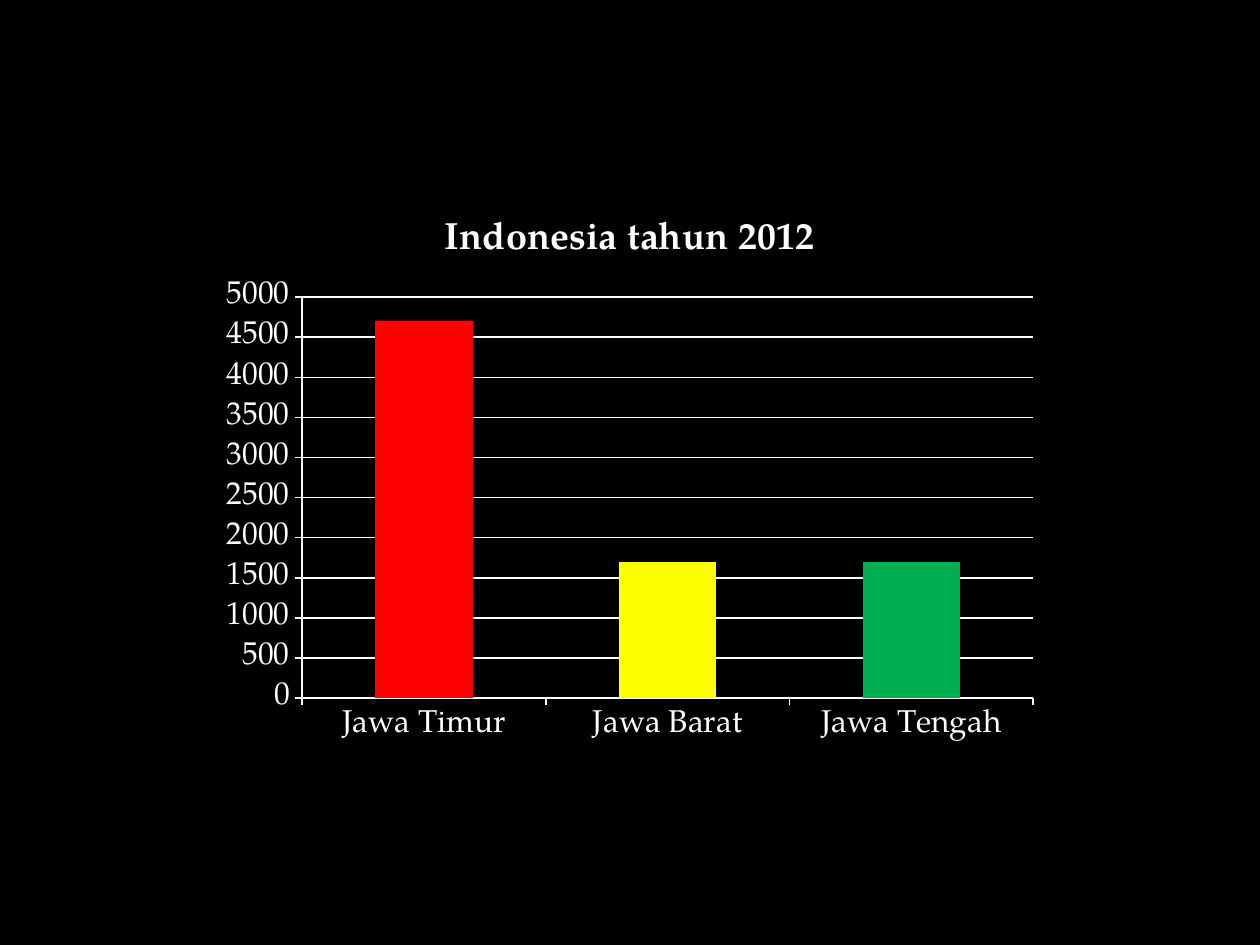
from pptx import Presentation
from pptx.chart.data import CategoryChartData
from pptx.dml.color import RGBColor
from pptx.enum.chart import XL_CHART_TYPE, XL_TICK_MARK
from pptx.util import Emu, Pt

SCALE = 914400 // 126
BLACK = RGBColor(0x00, 0x00, 0x00)
WHITE = RGBColor(0xFF, 0xFF, 0xFF)
RED = RGBColor(0xFF, 0x00, 0x00)
YELLOW = RGBColor(0xFF, 0xFF, 0x00)
GREEN = RGBColor(0x00, 0xB0, 0x50)
FACE = "TeX Gyre Pagella"


def px(count):
    return Emu(count * SCALE)


def style(font, size=18, bold=False, color=WHITE):
    font.name, font.size, font.bold = FACE, Pt(size), bold
    font.color.rgb = color


def write(frame, text, **form):
    run = frame.paragraphs[0].add_run()
    run.text = text
    style(run.font, **form)


class Deck:
    """Holds the line style and the current slide."""

    def __init__(self, wide, high):
        self.show = Presentation()
        self.show.slide_width, self.show.slide_height = px(wide), px(high)
        self.slide = self.show.slides.add_slide(self.show.slide_layouts[6])
        self.rule = Pt(1)

    def ground(self, color):
        fill = self.slide.background.fill
        fill.solid()
        fill.fore_color.rgb = color

    def line(self, part):
        part.format.line.color.rgb = WHITE
        part.format.line.width = self.rule

    def axis(self, axis):
        axis.major_tick_mark = XL_TICK_MARK.OUTSIDE
        axis.minor_tick_mark = XL_TICK_MARK.NONE
        style(axis.tick_labels.font)
        self.line(axis)

    def columns(self, box, title, rows):
        data = CategoryChartData()
        data.categories = [name for name, _, _ in rows]
        data.add_series("Series 1", [value for _, value, _ in rows])
        kind = XL_CHART_TYPE.COLUMN_STACKED
        chart = self.slide.shapes.add_chart(kind, *map(px, box), data).chart
        style(chart.font)
        chart.has_legend = False
        chart.has_title = True
        write(chart.chart_title.text_frame, title, size=21.6, bold=True)
        chart.chart_title.include_in_layout = False

        self.axis(chart.category_axis)
        scale = chart.value_axis
        self.axis(scale)
        scale.minimum_scale, scale.maximum_scale = 0, 5000
        scale.major_unit = 500
        self.line(scale.major_gridlines)

        plot = chart.plots[0]
        plot.gap_width, plot.overlap = 150, 100
        plot.vary_by_categories = False
        bars = plot.series[0]
        for spot, (_, _, color) in enumerate(rows):
            fill = bars.points[spot].format.fill
            fill.solid()
            fill.fore_color.rgb = color


def main():
    deck = Deck(1260, 945)
    deck.ground(BLACK)
    deck.columns((210, 193, 840, 560), "Indonesia tahun 2012", [
        ("Jawa Timur", 4700, RED),
        ("Jawa Barat", 1700, YELLOW),
        ("Jawa Tengah", 1700, GREEN),
    ])
    deck.show.save("out.pptx")


if __name__ == "__main__":
    main()
